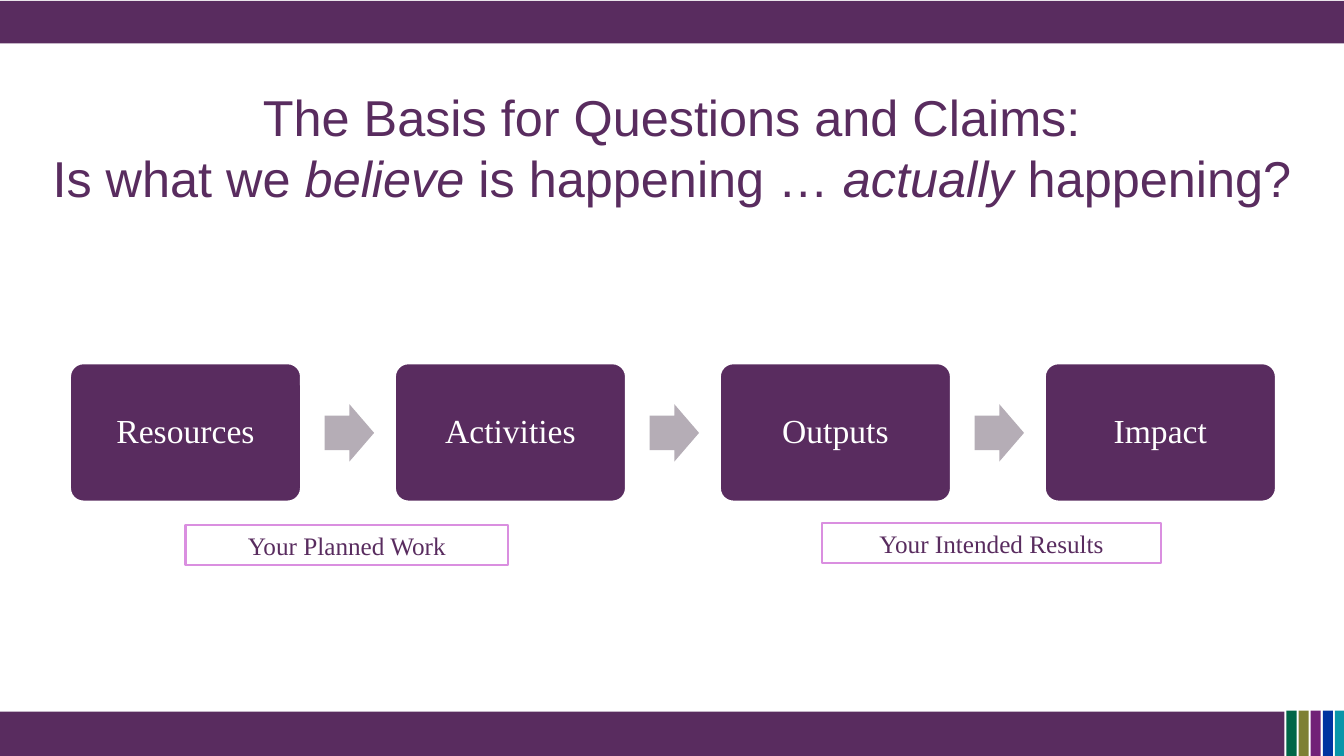
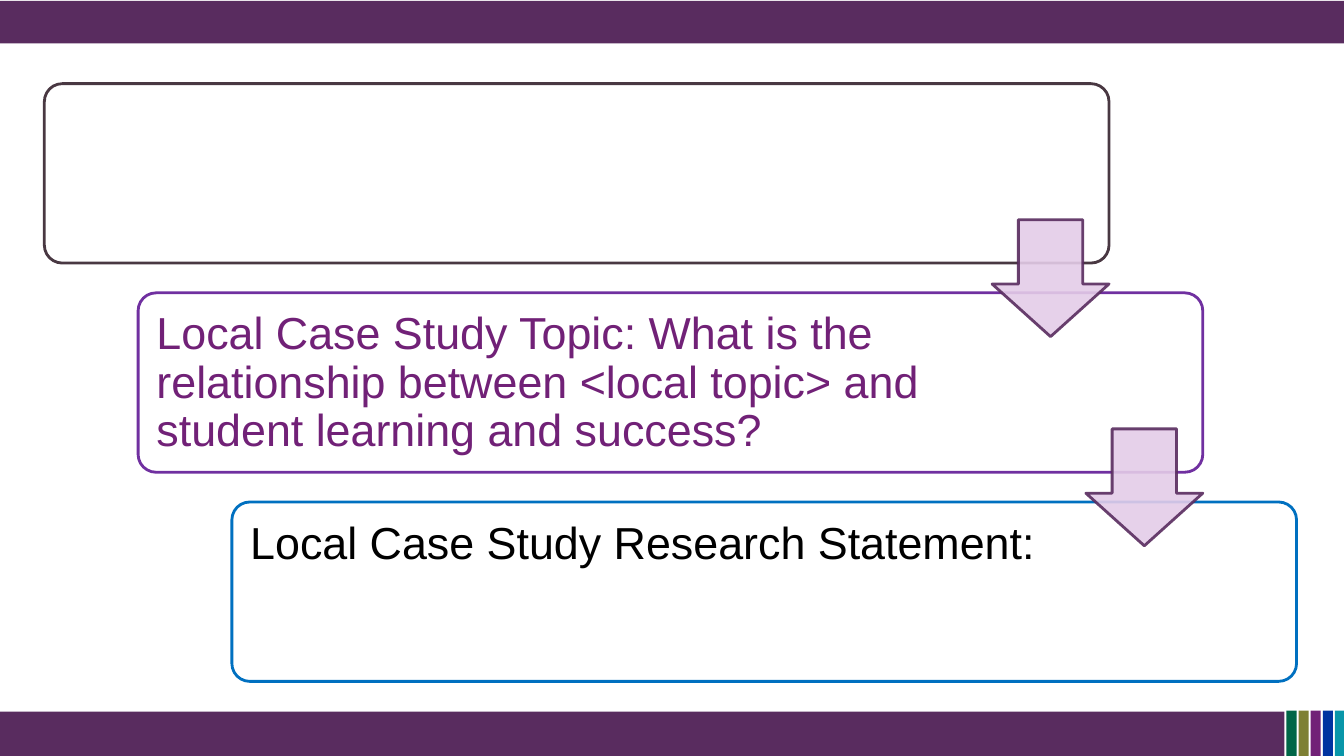
from lxml import etree
from pptx import Presentation
from pptx.dml.color import RGBColor
from pptx.enum.shapes import MSO_SHAPE
from pptx.enum.text import MSO_ANCHOR, PP_ALIGN
from pptx.oxml.ns import qn
from pptx.util import Inches, Pt

RECTANGLE = MSO_SHAPE.RECTANGLE
ROUNDED = MSO_SHAPE.ROUNDED_RECTANGLE
RIGHT_ARROW = MSO_SHAPE.RIGHT_ARROW
DOWN_ARROW = MSO_SHAPE.DOWN_ARROW
CENTER, LEFT = PP_ALIGN.CENTER, PP_ALIGN.LEFT
TOP, MIDDLE = MSO_ANCHOR.TOP, MSO_ANCHOR.MIDDLE

SANS, SERIF = "Arial", "Times New Roman"
PURPLE, WHITE, BLACK = "592C5F", "FFFFFF", "000000"
PLUM, PINK, LILAC, GREY = "712177", "DA8FE0", "E4CCE8", "B5ADB6"
STRIPES = ["006647", "7E8034", PLUM, "0033A0", "0996A9"]
SLIDE_WIDTH, SLIDE_HEIGHT = 13.33, 7.5


def color(value):
    """Turn a hex string into a colour."""
    return RGBColor.from_string(value)


def set_opacity(fill_element, percent):
    """Make a solid fill partly transparent."""
    alpha = etree.SubElement(fill_element.find(qn("a:solidFill"))[0], qn("a:alpha"))
    alpha.set("val", str(percent * 1000))


def add_shape(page, kind, left, top, width, height, fill=None, line=None,
              weight=2, adjustments=(), opacity=100):
    """Draw a preset shape without shadow."""
    shape = page.shapes.add_shape(kind, Inches(left), Inches(top), Inches(width), Inches(height))
    shape.shadow.inherit = False
    for index, value in enumerate(adjustments):
        shape.adjustments[index] = value
    if fill:
        shape.fill.solid()
        shape.fill.fore_color.rgb = color(fill)
    else:
        shape.fill.background()
    if line:
        shape.line.color.rgb = color(line)
        shape.line.width = Pt(weight)
    else:
        shape.line.fill.background()
    if opacity < 100:
        properties = shape.fill._xPr
        set_opacity(properties, opacity)
        set_opacity(properties.find(qn("a:ln")), opacity)
    return shape


def write_text(box, *paragraphs, font=SANS, size=18, ink=PURPLE, align=CENTER,
               anchor=MIDDLE, spacing=1.0, insets=(0.1, 0.05, 0.1, 0.05)):
    """Fill a box with paragraphs, each a list of (text, italic) spans."""
    frame = box.text_frame
    frame.word_wrap = True
    frame.vertical_anchor = anchor
    (frame.margin_left, frame.margin_top,
     frame.margin_right, frame.margin_bottom) = map(Inches, insets)
    for index, spans in enumerate(paragraphs):
        para = frame.add_paragraph() if index else frame.paragraphs[0]
        para.alignment = align
        para.line_spacing = spacing
        for text, italic in spans:
            span = para.add_run()
            span.text = text
            span.font.name = font
            span.font.size = Pt(size)
            span.font.italic = italic
            span.font.color.rgb = color(ink)


def add_page(deck):
    """Add a blank slide with the shared bands and footer stripes."""
    page = deck.slides.add_slide(deck.slide_layouts[6])
    add_shape(page, RECTANGLE, 0, 0.01, SLIDE_WIDTH, 0.42, PURPLE)
    add_shape(page, RECTANGLE, 0, 7.06, 12.74, 0.44, PURPLE)
    for index, stripe in enumerate(STRIPES):
        add_shape(page, RECTANGLE, 12.76 + 0.12 * index, 7.05, 0.1, 0.45, stripe)
    return page


def add_title(page, *lines):
    """Write the slide title under the top band."""
    box = page.shapes.add_textbox(0, Inches(0.44), Inches(SLIDE_WIDTH), Inches(2.03))
    write_text(box, *lines, size=36)


def add_flow(page, steps, left=0.69, pitch=3.223):
    """Draw a row of boxes joined by block arrows."""
    for index, step in enumerate(steps):
        start = left + pitch * index
        box = add_shape(page, ROUNDED, start, 3.6, 2.3, 1.38, PURPLE, WHITE, adjustments=[0.1])
        write_text(box, [(step, False)], font=SERIF, size=24, ink=WHITE, spacing=0.9)
        if index < len(steps) - 1:
            add_shape(page, RIGHT_ARROW, start + 2.53, 4.01, 0.49, 0.57, GREY,
                      adjustments=[0.6, 0.5])


def add_label(page, text, left, top, width, fill=None):
    """Draw an outlined caption box."""
    box = add_shape(page, RECTANGLE, left, top, width, 0.4, fill, PINK, 1.5)
    write_text(box, [(text, False)], font=SERIF)


def add_staircase(page, steps, left=0.44, top=0.83, shift=0.93, drop=2.075):
    """Draw stepped boxes with down arrows between them."""
    for index, (text, outline, ink) in enumerate(steps):
        box = add_shape(page, ROUNDED, left + shift * index, top + drop * index, 10.56, 1.78,
                        WHITE, outline, adjustments=[0.1])
        if text:
            write_text(box, [(text, False)], size=32, ink=ink, align=LEFT, anchor=TOP,
                       spacing=0.9, insets=(0.13, 0.13, 2.22, 0.13))
    for index in range(len(steps) - 1):
        add_shape(page, DOWN_ARROW, left + 9.4 + shift * index, top + 1.35 + drop * index,
                  1.16, 1.16, LILAC, PURPLE, adjustments=[0.55, 0.45], opacity=90)


def build_basis(deck):
    """Build the slide on questions and claims."""
    page = add_page(deck)
    add_title(page,
              [("The Basis for Questions and Claims:", False)],
              [("Is what we ", False), ("believe", True), (" is happening … ", False),
               ("actually", True), (" happening?", False)])
    add_flow(page, ["Resources", "Activities", "Outputs", "Impact"])
    add_label(page, "Your Planned Work", 1.84, 5.21, 3.2, WHITE)
    add_label(page, "Your Intended Results", 8.15, 5.19, 3.37)


def build_case_study(deck):
    """Build the slide on the local case study."""
    page = add_page(deck)
    add_staircase(page, [
        ("", "493842", BLACK),
        ("Local Case Study Topic: What is the relationship between <local topic> "
         "and student learning and success?", "7030A0", PLUM),
        ("Local Case Study Research Statement:", "0070C0", BLACK),
    ])


def main():
    """Build and save the deck."""
    deck = Presentation()
    deck.slide_width, deck.slide_height = Inches(SLIDE_WIDTH), Inches(SLIDE_HEIGHT)
    build_basis(deck)
    build_case_study(deck)
    deck.save("out.pptx")


if __name__ == "__main__":
    main()
